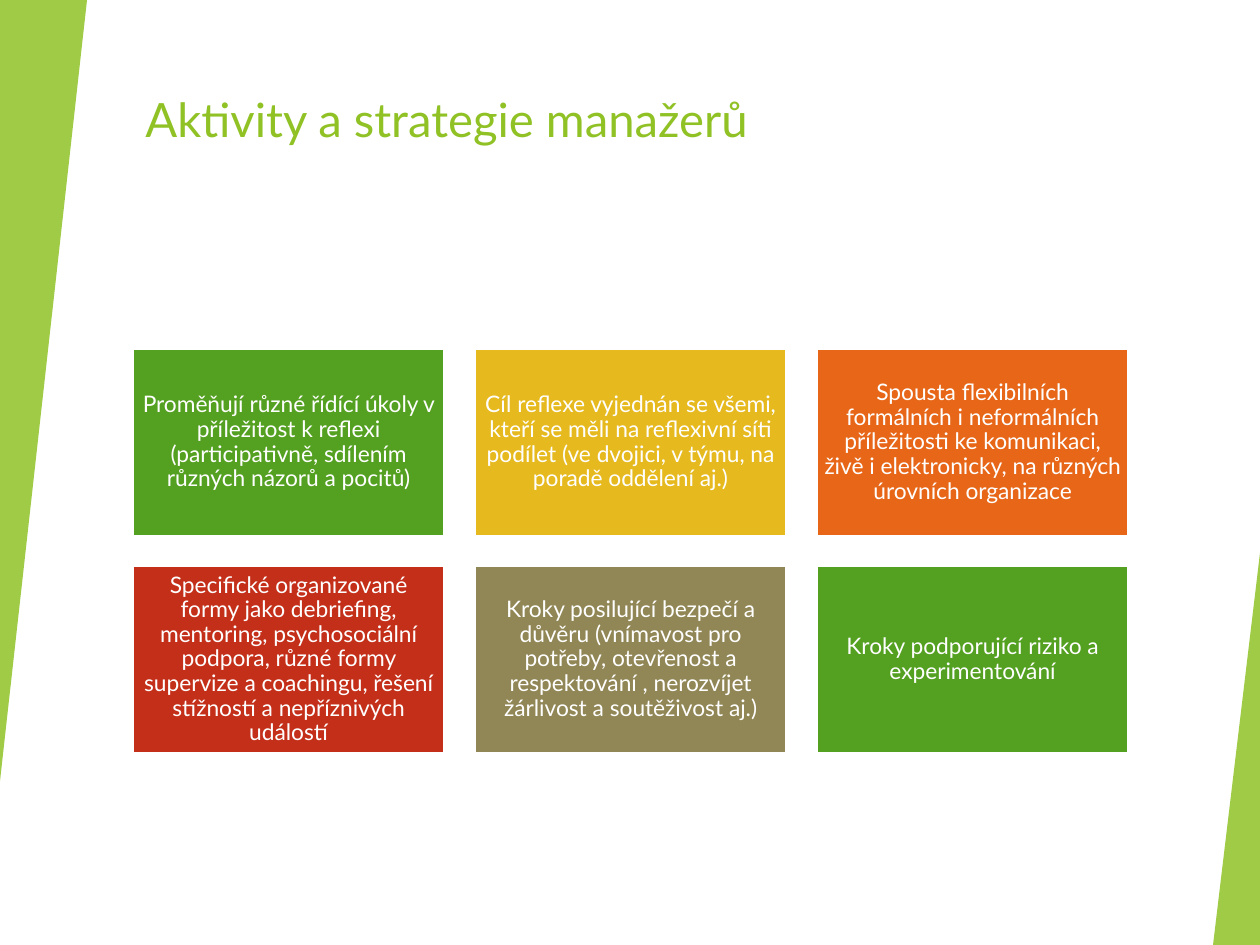
"""Build the slide on managers' activities and strategies."""
from dataclasses import dataclass

import pptx
import pptx.dml.color
import pptx.enum.shapes
import pptx.enum.text
import pptx.oxml.ns
import pptx.util
from lxml import etree

PX = 914400 / 126
FONT = "Lato"
COLORS = {
    "accent": "90C226",
    "green": "54A021",
    "yellow": "E6B91E",
    "orange": "E76618",
    "red": "C42F1A",
    "olive": "918655",
    "white": "FFFFFF",
}
COLUMNS = 3
CARD_LEFT, CARD_TOP = 133, 349
CARD_WIDTH, CARD_HEIGHT = 311, 187
STEP_X, STEP_Y = 342, 217
CARD_INSET = 6


@dataclass(frozen=True)
class Box:
    left: int
    top: int
    width: int
    height: int

    def emu(self) -> tuple:
        return tuple(px(n) for n in (self.left, self.top, self.width, self.height))


@dataclass(frozen=True)
class Card:
    color: str
    text: str


@dataclass(frozen=True)
class Wedge:
    box: Box
    rotation: int


CARDS = [
    Card("green", "Proměňují různé řídící úkoly v příležitost k reflexi "
                  "(participativně, sdílením různých názorů a pocitů)"),
    Card("yellow", "Cíl reflexe vyjednán se všemi, kteří se měli na reflexivní síti "
                   "podílet (ve dvojici, v týmu, na poradě oddělení aj.)"),
    Card("orange", "Spousta flexibilních formálních i neformálních příležitosti ke "
                   "komunikaci, živě i elektronicky, na různých úrovních organizace"),
    Card("red", "Specifické organizované formy jako debriefing, mentoring, "
                "psychosociální podpora, různé formy supervize a coachingu, "
                "řešení stížností a nepříznivých událostí"),
    Card("olive", "Kroky posilující bezpečí a důvěru (vnímavost pro potřeby, otevřenost "
                  "a respektování , nerozvíjet žárlivost a soutěživost aj.)"),
    Card("green", "Kroky podporující riziko a experimentování"),
]
WEDGES = [Wedge(Box(0, 0, 87, 781), 180), Wedge(Box(1213, 553, 47, 392), 0)]


def px(n: int) -> pptx.util.Emu:
    return pptx.util.Emu(round(n * PX))


def rgb(name: str) -> pptx.dml.color.RGBColor:
    return pptx.dml.color.RGBColor.from_string(COLORS[name])


def style_paragraph(p, text: str, size: int, color: str) -> None:
    p.text = text
    p.font.name = FONT
    p.font.size = pptx.util.Pt(size)
    p.font.color.rgb = rgb(color)


def add_filled(slide, kind, box: Box, color: str):
    sp = slide.shapes.add_shape(kind, *box.emu())
    sp.shadow.inherit = False
    sp.fill.solid()
    sp.fill.fore_color.rgb = rgb(color)
    return sp


def add_wedge(slide, wedge: Wedge) -> None:
    kind = pptx.enum.shapes.MSO_SHAPE.ISOSCELES_TRIANGLE
    sp = add_filled(slide, kind, wedge.box, "accent")
    sp.adjustments[0] = 1
    sp.rotation = wedge.rotation
    sp.line.fill.background()
    clr = sp.fill._xPr.find(".//" + pptx.oxml.ns.qn("a:srgbClr"))
    etree.SubElement(clr, pptx.oxml.ns.qn("a:alpha"), val="85000")


def add_title(slide, text: str, box: Box) -> None:
    tf = slide.shapes.add_textbox(*box.emu()).text_frame
    tf.word_wrap = True
    style_paragraph(tf.paragraphs[0], text, 27, "accent")


def add_card(slide, card: Card, box: Box) -> None:
    sp = add_filled(slide, pptx.enum.shapes.MSO_SHAPE.RECTANGLE, box, card.color)
    sp.line.color.rgb = rgb("white")
    sp.line.width = pptx.util.Pt(1.5)
    tf = sp.text_frame
    tf.word_wrap = True
    tf.vertical_anchor = pptx.enum.text.MSO_ANCHOR.MIDDLE
    tf.margin_left = tf.margin_right = px(CARD_INSET)
    tf.margin_top = tf.margin_bottom = px(CARD_INSET)
    p = tf.paragraphs[0]
    p.alignment = pptx.enum.text.PP_ALIGN.CENTER
    p.line_spacing = 0.9
    style_paragraph(p, card.text, 13, "white")


def main() -> None:
    prs = pptx.Presentation()
    prs.slide_width, prs.slide_height = px(1260), px(945)
    slide = prs.slides.add_slide(prs.slide_layouts[6])
    for wedge in WEDGES:
        add_wedge(slide, wedge)
    add_title(slide, "Aktivity a strategie manažerů", Box(133, 84, 1053, 151))
    for i, card in enumerate(CARDS):
        row, col = divmod(i, COLUMNS)
        add_card(slide, card, Box(CARD_LEFT + col * STEP_X, CARD_TOP + row * STEP_Y,
                                  CARD_WIDTH, CARD_HEIGHT))
    prs.save("out.pptx")


if __name__ == "__main__":
    main()
